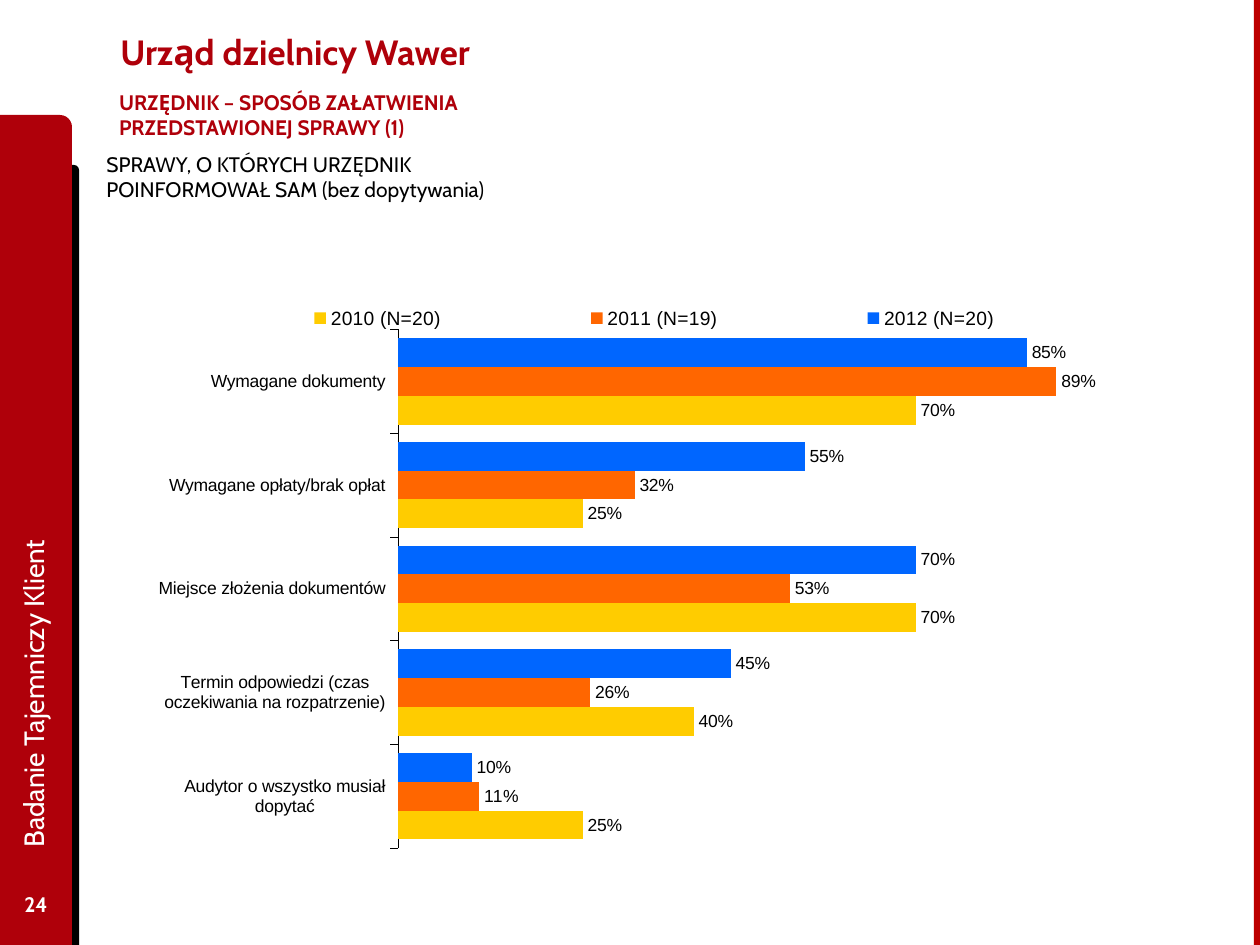
from dataclasses import dataclass

from lxml import etree
from pptx import Presentation
from pptx import util as u
from pptx.chart.data import CategoryChartData
from pptx.dml.color import RGBColor
from pptx.enum import chart as charts, shapes, text
from pptx.oxml.ns import qn

PX = 7257


@dataclass(frozen=True)
class Theme:
    font: str = "Cabin"
    chart_font: str = "Arial"
    red: str = "AF000A"
    edge_red: str = "BD0000"
    black: str = "000000"
    white: str = "FFFFFF"
    title: int = 20
    body: int = 12
    side: int = 16
    legend: int = 11
    label: int = 10


THEME = Theme()
ONE_ROUND = shapes.MSO_SHAPE.ROUND_1_RECTANGLE
PANELS = [
    (ONE_ROUND, (49, 165, 30, 780), THEME.black),
    (ONE_ROUND, (0, 115, 72, 830), THEME.red),
    (shapes.MSO_SHAPE.RECTANGLE, (1254, 0, 6, 945), THEME.edge_red),
]
TEXTS = [
    dict(words="Urząd dzielnicy Wawer", box=(108, 6, 979, 91), size=THEME.title,
         color=THEME.red, bold=True, middle=True),
    dict(words="URZĘDNIK – SPOSÓB ZAŁATWIENIA PRZEDSTAWIONEJ SPRAWY (1)",
         box=(94, 83, 485, 42), size=THEME.body, color=THEME.red, bold=True,
         wrap=False, inset=25),
    dict(words="SPRAWY, O KTÓRYCH URZĘDNIK POINFORMOWAŁ SAM (bez dopytywania)",
         box=(94, 145, 407, 89), size=THEME.body, color=THEME.black),
    dict(words="24", box=(0, 879, 72, 50), size=THEME.body, color=THEME.white,
         bold=True, middle=True, align=text.PP_ALIGN.CENTER),
    dict(words="Badanie Tajemniczy Klient", box=(-330, 465, 726, 64),
         size=THEME.side, color=THEME.white, middle=True, rotation=270),
]
CHART_BOX = (151, 284, 987, 570)
PLOT_AREA = (0.25, 0.08, 0.75, 0.91)
LEGEND_AREA = (0.02, 0.02, 0.98, 0.08)
CATEGORIES = [
    "Wymagane dokumenty",
    "Wymagane opłaty/brak opłat",
    "Miejsce złożenia dokumentów",
    "Termin odpowiedzi (czas oczekiwania na rozpatrzenie)",
    "Audytor o wszystko musiał dopytać",
]
SERIES = [
    ("2012 (N=20)", "0066FF", (0.85, 0.55, 0.7, 0.45, 0.1)),
    ("2011 (N=19)", "FF6600", (0.89, 0.32, 0.53, 0.26, 0.11)),
    ("2010 (N=20)", "FFCC00", (0.7, 0.25, 0.7, 0.4, 0.25)),
]


def scaled(box):
    return [value * PX for value in box]


def style_font(font, name, size, color, bold=False):
    font.name = name
    font.size = u.Pt(size)
    font.bold = bold
    font.color.rgb = RGBColor.from_string(color)


def paint(fill, color):
    fill.solid()
    fill.fore_color.rgb = RGBColor.from_string(color)


def add_panel(slide, kind, box, color):
    panel = slide.shapes.add_shape(kind, *scaled(box))
    panel.shadow.inherit = False
    paint(panel.fill, color)
    panel.line.fill.background()


def add_text(slide, words, box, size, color, bold=False, middle=False,
             wrap=True, inset=None, align=text.PP_ALIGN.LEFT, rotation=0):
    shape = slide.shapes.add_textbox(*scaled(box))
    shape.rotation = rotation
    frame = shape.text_frame
    frame.word_wrap = wrap
    frame.vertical_anchor = text.MSO_ANCHOR.MIDDLE if middle else text.MSO_ANCHOR.TOP
    if inset is not None:
        frame.margin_left = frame.margin_right = inset * PX
    paragraph = frame.paragraphs[0]
    paragraph.alignment = align
    run = paragraph.add_run()
    run.text = words
    style_font(run.font, THEME.font, size, color, bold)


def set_layout(element, area, before, inner=False):
    for old in element.findall(qn("c:layout")):
        element.remove(old)
    layout = etree.Element(qn("c:layout"))
    manual = etree.SubElement(layout, qn("c:manualLayout"))
    settings = [("layoutTarget", "inner")] if inner else []
    settings += [("xMode", "edge"), ("yMode", "edge")]
    settings += zip("xywh", area)
    for tag, value in settings:
        etree.SubElement(manual, qn(f"c:{tag}")).set("val", str(value))
    element.find(qn(before)).addprevious(layout)


def add_bar_chart(slide):
    data = CategoryChartData(number_format="0%")
    data.categories = CATEGORIES
    for name, color, values in SERIES:
        data.add_series(name, values)
    chart = slide.shapes.add_chart(
        charts.XL_CHART_TYPE.BAR_CLUSTERED, *scaled(CHART_BOX), data).chart
    chart.has_title = False
    style_font(chart.font, THEME.chart_font, THEME.label, THEME.black)

    plot = chart.plots[0]
    plot.gap_width = 60
    plot.overlap = 0
    plot.vary_by_categories = False
    for series, (name, color, values) in zip(plot.series, SERIES):
        paint(series.format.fill, color)
        labels = series.data_labels
        labels.show_value = True
        labels.number_format = "0%"
        labels.number_format_is_linked = False
        labels.position = charts.XL_LABEL_POSITION.OUTSIDE_END
        style_font(labels.font, THEME.chart_font, THEME.label, THEME.black)

    categories = chart.category_axis
    categories.reverse_order = True
    categories.has_major_gridlines = False
    categories.major_tick_mark = charts.XL_TICK_MARK.OUTSIDE
    categories.format.line.width = u.Pt(0.25)
    categories.format.line.color.rgb = RGBColor.from_string(THEME.black)
    style_font(categories.tick_labels.font, THEME.chart_font, THEME.label, THEME.black)
    values_axis = chart.value_axis
    values_axis.minimum_scale = 0
    values_axis.maximum_scale = 1
    values_axis.major_unit = 0.2
    values_axis.has_major_gridlines = False
    values_axis.visible = False

    chart.has_legend = True
    legend = chart.legend
    legend.position = charts.XL_LEGEND_POSITION.RIGHT
    legend.include_in_layout = False
    style_font(legend.font, THEME.chart_font, THEME.legend, THEME.black)
    chart_element = chart.element.find(qn("c:chart"))
    set_layout(chart_element.find(qn("c:plotArea")), PLOT_AREA, "c:barChart", inner=True)
    set_layout(chart_element.find(qn("c:legend")), LEGEND_AREA, "c:overlay")


def main():
    presentation = Presentation()
    presentation.slide_width = u.Inches(10)
    presentation.slide_height = u.Inches(7.5)
    slide = presentation.slides.add_slide(presentation.slide_layouts[6])
    paint(slide.background.fill, THEME.white)
    for panel in PANELS:
        add_panel(slide, *panel)
    add_bar_chart(slide)
    for item in TEXTS:
        add_text(slide, **item)
    presentation.save("out.pptx")


if __name__ == "__main__":
    main()
